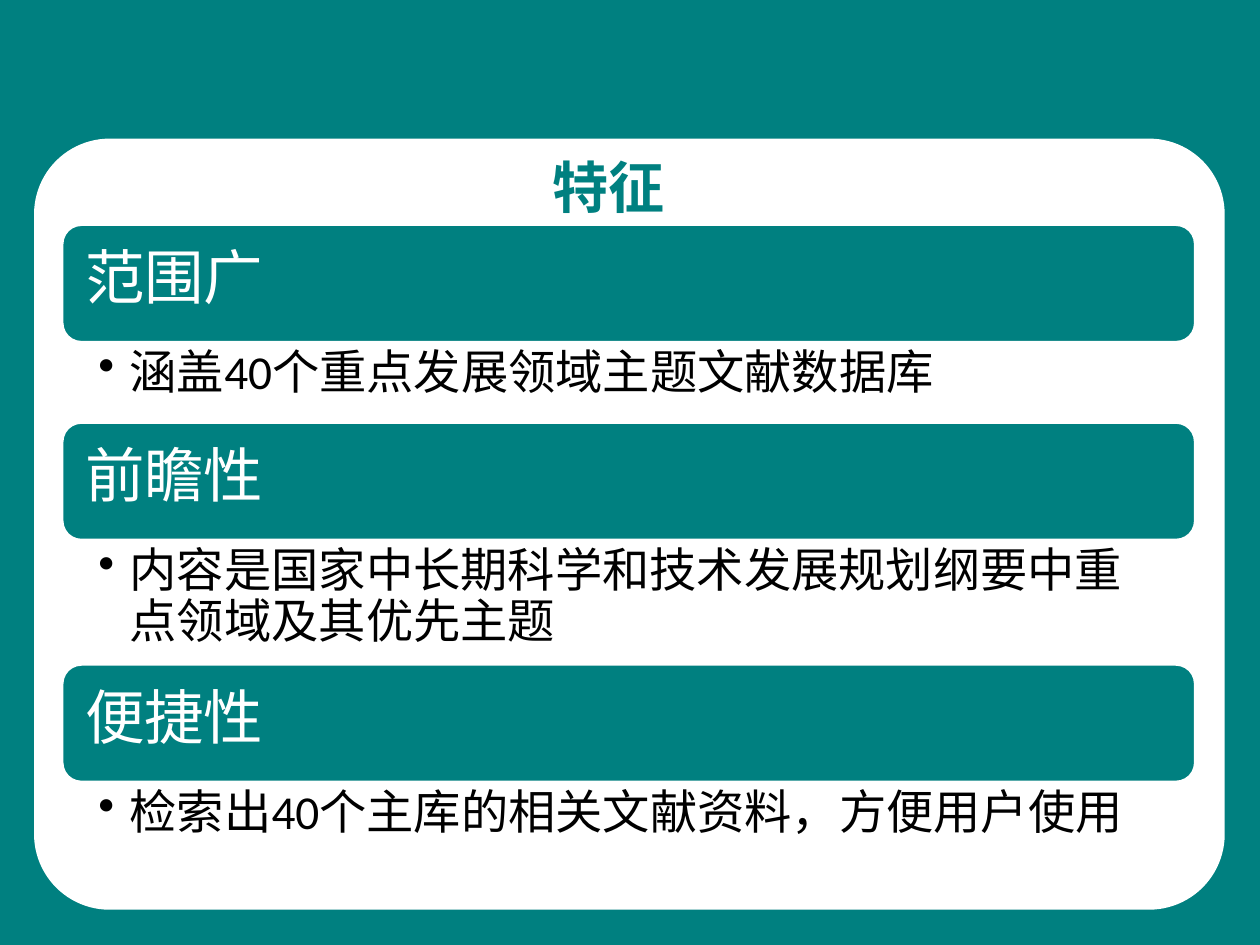
from lxml.etree import SubElement
from pptx import Presentation
from pptx.dml.color import RGBColor
from pptx.enum.shapes import MSO_SHAPE
from pptx.enum.text import MSO_ANCHOR, PP_ALIGN
from pptx.oxml.ns import qn
from pptx.util import Inches, Pt

COLOURS = {"teal": "008080", "white": "FFFFFF", "black": "000000"}
COLUMNS, ROWS = 100, 75
SLIDE_WIDTH, SLIDE_HEIGHT = Inches(10), Inches(7.5)
CJK_FONT = "Noto Sans CJK SC"
LEFT, WIDTH, BAR_ROWS, FIRST_ROW = 4.9, 90, 9.4, 17.8
FEATURES = [
    ("范围广", "涵盖40个重点发展领域主题文献数据库", 6.3),
    ("前瞻性", "内容是国家中长期科学和技术发展规划纲要中重点领域及其优先主题", 9.8),
    ("便捷性", "检索出40个主库的相关文献资料，方便用户使用", 6.3),
]
FORMATS = {
    "title": {"name": CJK_FONT, "size": Pt(32), "bold": True},
    "heading": {"name": "Calibri", "size": Pt(34), "bold": False},
    "detail": {"name": "Calibri", "size": Pt(27), "bold": False},
}


def colour(name):
    """Return a palette colour."""
    return RGBColor.from_string(COLOURS[name])


def cells(column, row, columns, rows):
    """Turn grid cells into left, top, width and height."""
    across, down = SLIDE_WIDTH / COLUMNS, SLIDE_HEIGHT / ROWS
    return [round(length) for length in
            (column * across, row * down, columns * across, rows * down)]


def set_frame(frame, anchor, left, top, right, bottom):
    """Set wrapping, anchor and insets in inches."""
    values = {
        "word_wrap": True, "vertical_anchor": anchor,
        "margin_left": Inches(left), "margin_top": Inches(top),
        "margin_right": Inches(right), "margin_bottom": Inches(bottom),
    }
    for key, value in values.items():
        setattr(frame, key, value)


def write(frame, text, style, ink, align=PP_ALIGN.LEFT, spacing=0.9):
    """Write one formatted paragraph and return it."""
    para = frame.paragraphs[0]
    para.alignment, para.line_spacing = align, spacing
    span = para.add_run()
    span.text = text
    for key, value in FORMATS[style].items():
        setattr(span.font, key, value)
    span.font.color.rgb = colour(ink)
    SubElement(span.font._element, qn("a:ea"), typeface=CJK_FONT)
    return para


def add_round_box(page, place, fill):
    """Add a rounded rectangle without shadow or line."""
    box = page.shapes.add_shape(MSO_SHAPE.ROUNDED_RECTANGLE, *place)
    box.shadow.inherit = False
    box.fill.solid()
    box.fill.fore_color.rgb = colour(fill)
    box.line.fill.background()
    return box


def add_panel(page):
    """Add the white panel behind everything else."""
    panel = add_round_box(page, cells(2.7, 11, 94.5, 61.2), "white")
    panel.adjustments[0] = 0.098
    page.shapes._spTree.insert(2, panel._element)


def place_title(page, text):
    """Move and format the title placeholder."""
    title = page.shapes.title
    title.left, title.top, title.width, title.height = cells(3.3, 11.6, 90, 12.5)
    set_frame(title.text_frame, MSO_ANCHOR.TOP, 0.1, 0.05, 0.1, 0.05)
    write(title.text_frame, text, "title", "teal", PP_ALIGN.CENTER, 1.0)


def add_heading(page, row, text):
    """Add a teal heading bar."""
    bar = add_round_box(page, cells(LEFT, row, WIDTH, BAR_ROWS), "teal")
    bar.line.color.rgb = colour("white")
    bar.line.width = Pt(2)
    set_frame(bar.text_frame, MSO_ANCHOR.MIDDLE, 0.14, 0.14, 0.14, 0.19)
    write(bar.text_frame, text, "heading", "white")


def add_detail(page, row, rows, text):
    """Add a bulleted line below a heading bar."""
    box = page.shapes.add_textbox(*cells(LEFT, row, WIDTH, rows))
    set_frame(box.text_frame, MSO_ANCHOR.TOP, 0.29, 0.05, 0.26, 0.05)
    para = write(box.text_frame, text, "detail", "black")
    properties = para._p.get_or_add_pPr()
    properties.set("marL", str(Inches(0.25)))
    properties.set("indent", str(-Inches(0.25)))
    SubElement(properties, qn("a:buChar"), char="•")


def main():
    """Build and save the slide."""
    deck = Presentation()
    deck.slide_width, deck.slide_height = SLIDE_WIDTH, SLIDE_HEIGHT
    page = deck.slides.add_slide(deck.slide_layouts[5])
    page.background.fill.solid()
    page.background.fill.fore_color.rgb = colour("teal")
    add_panel(page)
    place_title(page, "特征")
    row = FIRST_ROW
    for heading, detail, detail_rows in FEATURES:
        add_heading(page, row, heading)
        add_detail(page, row + BAR_ROWS, detail_rows, detail)
        row += BAR_ROWS + detail_rows
    deck.save("out.pptx")


if __name__ == "__main__":
    main()
